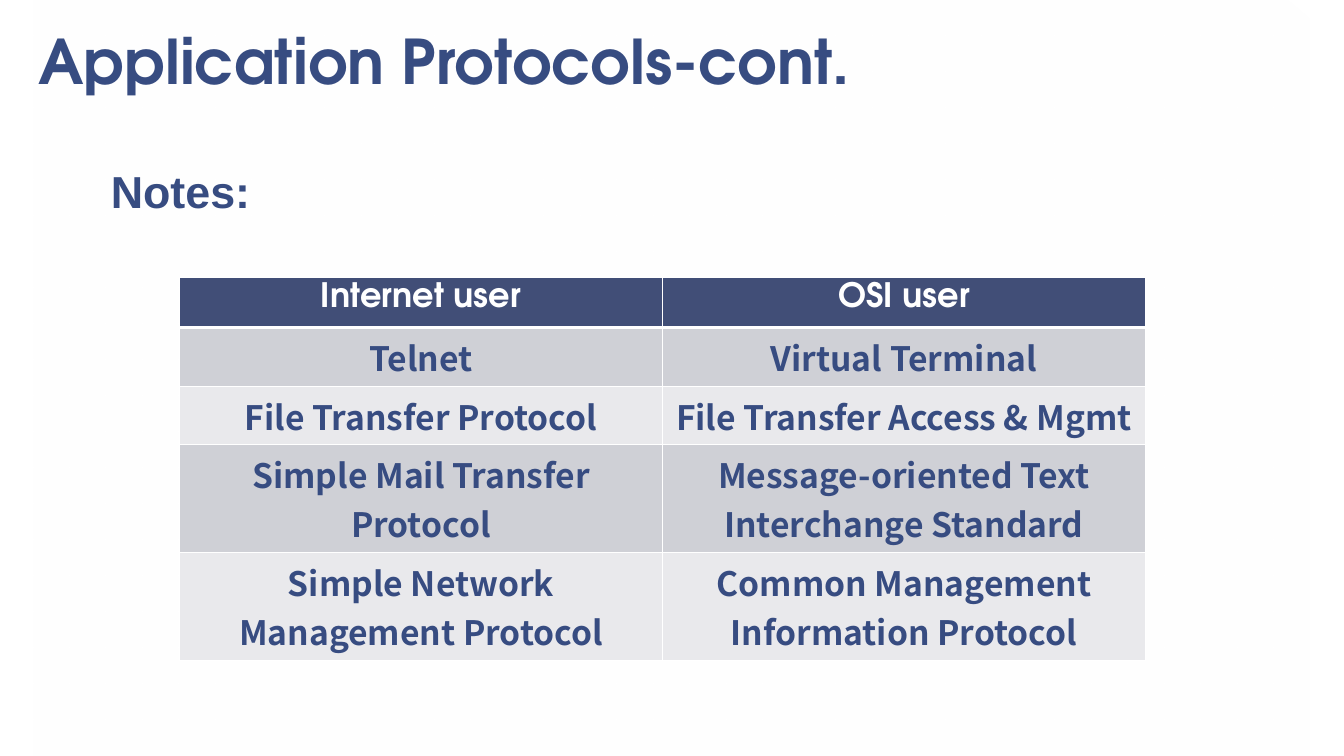
from lxml.etree import SubElement
from pptx import Presentation
from pptx.dml.color import RGBColor
from pptx.enum.shapes import MSO_SHAPE
from pptx.enum.text import MSO_ANCHOR, PP_ALIGN
from pptx.oxml.ns import qn
from pptx.util import Inches, Pt

COLORS = {"white": "FFFFFF", "navy": "374C81", "header": "414E77",
          "dark": "CFD0D6", "light": "E9E9EC"}
ADVENTOR, NOTO, ARIAL = "TeX Gyre Adventor", "Noto Sans CJK SC", "Arial"


def add_run(p, text, font, size, color):
    r = p.add_run()
    r.text = text
    for key, value in {"name": font, "size": Pt(size), "bold": True}.items():
        setattr(r.font, key, value)
    r.font.color.rgb = RGBColor.from_string(COLORS[color])


def set_borders(cell, widths):
    """Draw white cell borders, given a width in points for each side tag."""
    tc_pr = cell._tc.get_or_add_tcPr()
    for i, (side, width) in enumerate(widths.items()):
        ln = SubElement(tc_pr, qn(f"a:{side}"), w=str(Pt(width)))
        fill = SubElement(ln, qn("a:solidFill"))
        SubElement(fill, qn("a:srgbClr"), val=COLORS["white"])
        tc_pr.insert(i, ln)


prs = Presentation()
prs.slide_width, prs.slide_height = Inches(13.33), Inches(7.5)
s = prs.slides.add_slide(prs.slide_layouts[6])
s.background.fill.solid()
s.background.fill.fore_color.rgb = RGBColor.from_string(COLORS["white"])

# Soft white panel
sp = s.shapes.add_shape(MSO_SHAPE.RECTANGLE, Inches(0.33), 0, Inches(12.66), Inches(7.5))
sp.shadow.inherit = False
sp.line.fill.background()
sp.fill.gradient()
sp.fill.gradient_angle = 230
for stop in sp.fill.gradient_stops:
    stop.color.rgb = RGBColor.from_string(COLORS["white"])
for clr, alpha in zip(sp._element.spPr.iter(qn("a:srgbClr")), ("0", "55000")):
    SubElement(clr, qn("a:alpha"), val=alpha)

# Title and subtitle
title = s.shapes.add_textbox(Inches(0.25), Inches(-0.5), Inches(11.11), Inches(1.53))
tf = title.text_frame
for key, value in {"word_wrap": True, "vertical_anchor": MSO_ANCHOR.BOTTOM,
                   "margin_left": Inches(0.13), "margin_right": Inches(0.13),
                   "margin_top": Inches(0.07), "margin_bottom": Inches(0.07)}.items():
    setattr(tf, key, value)
tf.paragraphs[0].line_spacing = 0.85
add_run(tf.paragraphs[0], "Application Protocols-cont.", ADVENTOR, 44, "navy")

notes = s.shapes.add_textbox(Inches(1), Inches(1.58), Inches(1.72), Inches(0.64))
notes.text_frame.word_wrap = False
add_run(notes.text_frame.paragraphs[0], "Notes:", ARIAL, 32, "navy")

# Protocol table
rows = [
    ("Internet user", "OSI user"),
    ("Telnet", "Virtual Terminal"),
    ("File Transfer Protocol", "File Transfer Access & Mgmt"),
    ("Simple Mail Transfer Protocol", "Message-oriented Text Interchange Standard"),
    ("Simple Network Management Protocol", "Common Management Information Protocol"),
]
heights = [0.41, 0.58, 0.58, 1.07, 1.07]
table = s.shapes.add_table(len(rows), 2, Inches(1.78), Inches(2.75),
                           Inches(9.58), Inches(sum(heights))).table
for i, (texts, height) in enumerate(zip(rows, heights)):
    table.rows[i].height = Inches(height)
    is_header = i == 0
    fill = "header" if is_header else ("light", "dark")[i % 2]
    for j, text in enumerate(texts):
        cell = table.cell(i, j)
        cell.fill.solid()
        cell.fill.fore_color.rgb = RGBColor.from_string(COLORS[fill])
        set_borders(cell, {"lnL": 1, "lnR": 1, "lnT": 3 if i == 1 else 1,
                           "lnB": 3 if is_header else 1})
        p = cell.text_frame.paragraphs[0]
        p.alignment = PP_ALIGN.CENTER
        add_run(p, text, ADVENTOR if is_header else NOTO, 24,
                "white" if is_header else "navy")

prs.save("out.pptx")
